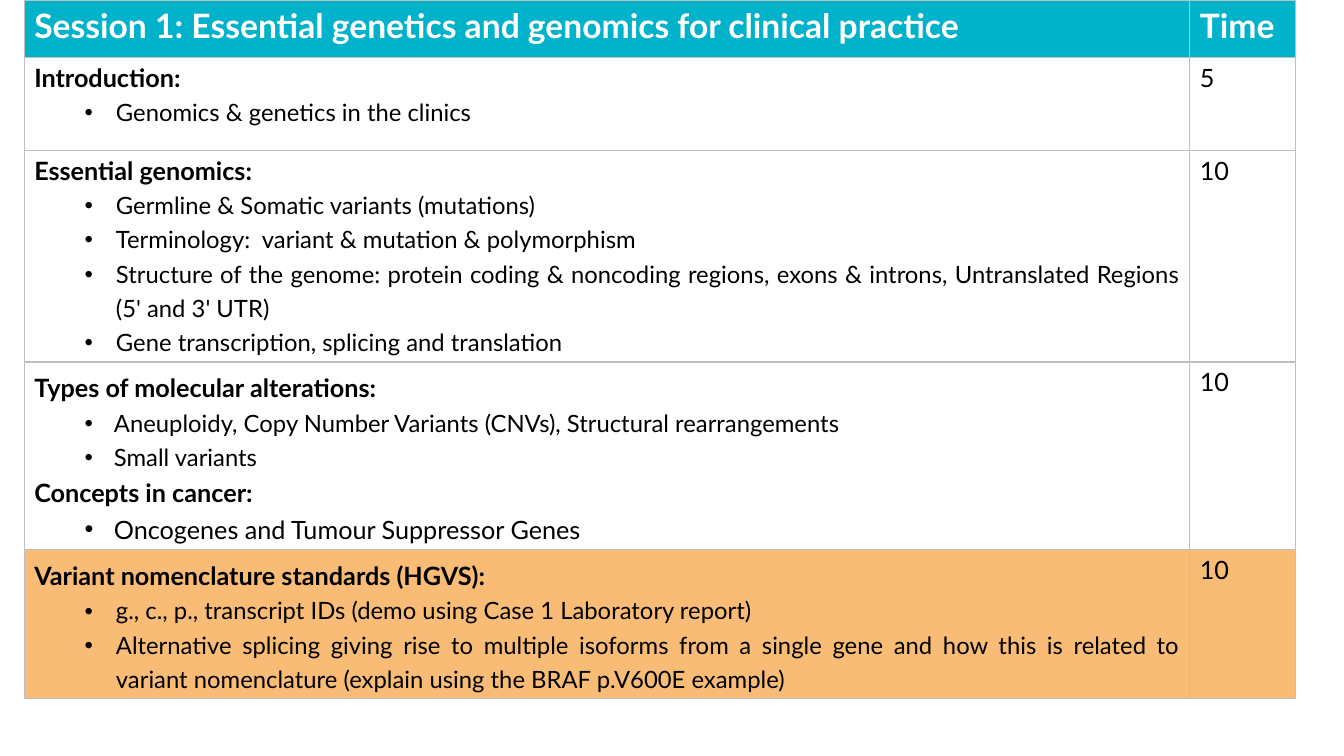
from lxml import etree
from pptx import Presentation
from pptx import util as u
from pptx.dml.color import RGBColor
from pptx.enum import text
from pptx.oxml.ns import qn

FONT = "Lato"
HEADER = ("Session 1: Essential genetics and genomics for clinical practice", "Time")
COLS = (11.56, 1.05)
HEADER_HEIGHT = 0.57

# kind, text
SESSIONS = [
    (0.92, "5", None, 1.0, 0.81, [
        ("head", "Introduction:"),
        ("item", "Genomics & genetics in the clinics"),
    ]),
    (2.1, "10", None, 1.0, 0.81, [
        ("head", "Essential genomics:"),
        ("item", "Germline & Somatic variants (mutations)"),
        ("item", "Terminology:  variant & mutation & polymorphism"),
        ("item", "Structure of the genome: protein coding & noncoding regions, "
                 "exons & introns, Untranslated Regions (5' and 3' UTR)"),
        ("item", "Gene transcription, splicing and translation"),
    ]),
    (1.85, "10", None, 1.2, 0.79, [
        ("head", "Types of molecular alterations:"),
        ("item", "Aneuploidy, Copy Number Variants (CNVs), Structural rearrangements"),
        ("item", "Small variants"),
        ("subhead", "Concepts in cancer:"),
        ("large item", "Oncogenes and Tumour Suppressor Genes"),
    ]),
    (1.47, "10", "F9BC76", 1.2, 0.81, [
        ("head", "Variant nomenclature standards (HGVS):"),
        ("item", "g., c., p., transcript IDs (demo using Case 1 Laboratory report)"),
        ("item", "Alternative splicing giving rise to multiple isoforms from a single gene "
                 "and how this is related to variant nomenclature "
                 "(explain using the BRAF p.V600E example)"),
    ]),
]


def rgb(color):
    return RGBColor.from_string(color)


def style_cell(cell, fill):
    if fill:
        cell.fill.solid()
        cell.fill.fore_color.rgb = rgb(fill)
    else:
        cell.fill.background()
    tcPr = cell._tc.get_or_add_tcPr()
    for i, side in enumerate(("a:lnL", "a:lnR", "a:lnT", "a:lnB")):
        ln = etree.Element(qn(side), w=str(u.Pt(1)))
        solid = etree.SubElement(ln, qn("a:solidFill"))
        etree.SubElement(solid, qn("a:srgbClr"), val="BFBFBF")
        tcPr.insert(i, ln)


def write(p, words, size, color="000000", bold=False):
    p.text = words
    for r in p.runs:
        r.font.name = FONT
        r.font.size = u.Pt(size)
        r.font.bold = bold
        r.font.color.rgb = rgb(color)


def set_bullet(p, left):
    pPr = p._p.get_or_add_pPr()
    pPr.set("marL", str(u.Inches(left)))
    pPr.set("indent", str(u.Inches(0.5 - left)))
    etree.SubElement(pPr, qn("a:buFont"), typeface="Arial")
    etree.SubElement(pPr, qn("a:buChar"), char="•")


def write_topics(tf, topics, head_spacing, left):
    for i, (kind, words) in enumerate(topics):
        p = tf.add_paragraph() if i else tf.paragraphs[0]
        p.line_spacing = 1.2 if i else head_spacing
        if kind == "subhead":
            p.alignment = text.PP_ALIGN.LEFT
        else:
            p.alignment = text.PP_ALIGN.JUSTIFY
        if kind.endswith("item"):
            p.level = 1
            set_bullet(p, left)
        write(p, words, 17 if kind == "item" else 18, bold=kind.endswith("head"))


def add_agenda(s, x, y, w, h):
    frame = s.shapes.add_table(len(SESSIONS) + 1, 2, u.Inches(x), u.Inches(y),
                               u.Inches(w), u.Inches(h))
    table = frame.table
    table.first_row = table.horz_banding = False
    for col, width in zip(table.columns, COLS):
        col.width = u.Inches(width)
    table.rows[0].height = u.Inches(HEADER_HEIGHT)
    for cell, words in zip(table.rows[0].cells, HEADER):
        style_cell(cell, "00B2CA")
        write(cell.text_frame.paragraphs[0], words, 24, "FFFFFF", True)
    for i, (height, minutes, fill, spacing, left, topics) in enumerate(SESSIONS, 1):
        table.rows[i].height = u.Inches(height)
        topic_cell, time_cell = table.rows[i].cells
        style_cell(topic_cell, fill)
        style_cell(time_cell, fill)
        write_topics(topic_cell.text_frame, topics, spacing, left)
        write(time_cell.text_frame.paragraphs[0], minutes, 18)


def main():
    prs = Presentation()
    prs.slide_width, prs.slide_height = u.Inches(13.33), u.Inches(7.5)
    s = prs.slides.add_slide(prs.slide_layouts[6])
    add_agenda(s, 0.24, 0, 12.62, 6.84)
    prs.save("out.pptx")


if __name__ == "__main__":
    main()
